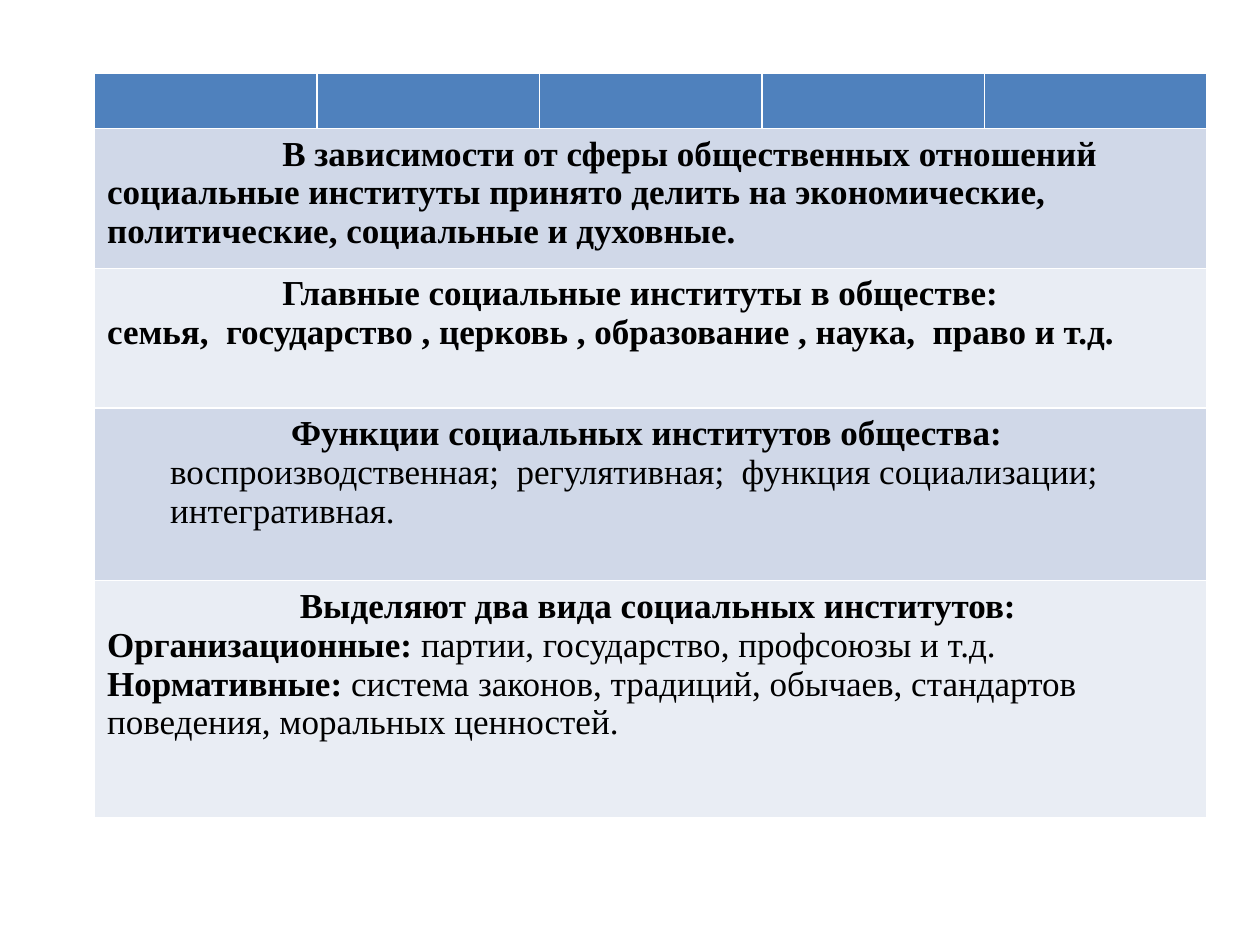
from dataclasses import dataclass

from pptx import Presentation
from pptx.dml.color import RGBColor
from pptx.table import Table, _Cell
from pptx.util import Inches, Pt

BLANK_LAYOUT = 6
COLUMNS = 5
LEFT, TOP, WIDTH = 0.75, 0.58, 8.83
HEADER_HEIGHT = 0.44


@dataclass(frozen=True)
class Theme:
    font: str = "Times New Roman"
    size: int = 20
    text: RGBColor = RGBColor(0x00, 0x00, 0x00)
    header: RGBColor = RGBColor(0x4F, 0x81, 0xBD)
    bands: tuple[RGBColor, ...] = (
        RGBColor(0xD0, 0xD8, 0xE8),
        RGBColor(0xE9, 0xED, 0xF4),
    )


@dataclass(frozen=True)
class Line:
    bold: str = ""
    plain: str = ""
    first_indent: float = 0
    level: int = 0


@dataclass(frozen=True)
class Section:
    height: float
    lines: tuple[Line, ...]


THEME = Theme()
SECTIONS = (
    Section(1.11, (
        Line("В зависимости от сферы общественных отношений социальные институты "
             "принято делить на экономические, политические, социальные и духовные.",
             first_indent=1.39),
    )),
    Section(1.11, (
        Line("Главные социальные институты в обществе:", first_indent=1.39),
        Line("семья,  государство , церковь , образование , наука,  право и т.д."),
    )),
    Section(1.37, (
        Line("Функции социальных институтов общества:", first_indent=1.46),
        Line(plain="воспроизводственная;  регулятивная;  функция социализации;", level=1),
        Line(plain="интегративная.", level=1),
    )),
    Section(1.88, (
        Line("Выделяют два вида социальных институтов:", first_indent=1.53),
        Line("Организационные:", " партии, государство, профсоюзы и т.д."),
        Line("Нормативные:", " система законов, традиций, обычаев, стандартов "
             "поведения, моральных ценностей."),
    )),
)


def fill_cell(cell: _Cell, color: RGBColor) -> None:
    cell.fill.solid()
    cell.fill.fore_color.rgb = color


def write_lines(cell: _Cell, lines: tuple[Line, ...]) -> None:
    frame = cell.text_frame
    for index, line in enumerate(lines):
        para = frame.add_paragraph() if index else frame.paragraphs[0]
        para.level = line.level
        para.font.name = THEME.font
        para.font.size = Pt(THEME.size)
        para.font.color.rgb = THEME.text
        properties = para._p.get_or_add_pPr()
        properties.set("marL", str(Inches(0.5 * line.level)))
        properties.set("indent", str(Inches(line.first_indent)))
        for text, bold in ((line.bold, True), (line.plain, False)):
            if text:
                span = para.add_run()
                span.text = text
                span.font.name = THEME.font
                span.font.size = Pt(THEME.size)
                span.font.color.rgb = THEME.text
                span.font.bold = bold


def draw_section(table: Table, row: int, section: Section) -> None:
    table.rows[row].height = Inches(section.height)
    first = table.cell(row, 0)
    first.merge(table.cell(row, COLUMNS - 1))
    fill_cell(first, THEME.bands[(row - 1) % len(THEME.bands)])
    write_lines(first, section.lines)


def main() -> None:
    deck = Presentation()
    deck.slide_width, deck.slide_height = Inches(10), Inches(7.5)
    page = deck.slides.add_slide(deck.slide_layouts[BLANK_LAYOUT])
    height = HEADER_HEIGHT + sum(section.height for section in SECTIONS)
    table = page.shapes.add_table(
        len(SECTIONS) + 1, COLUMNS,
        Inches(LEFT), Inches(TOP), Inches(WIDTH), Inches(height),
    ).table
    table.rows[0].height = Inches(HEADER_HEIGHT)
    for column in range(COLUMNS):
        fill_cell(table.cell(0, column), THEME.header)
    for row, section in enumerate(SECTIONS, start=1):
        draw_section(table, row, section)
    deck.save("out.pptx")


if __name__ == "__main__":
    main()
